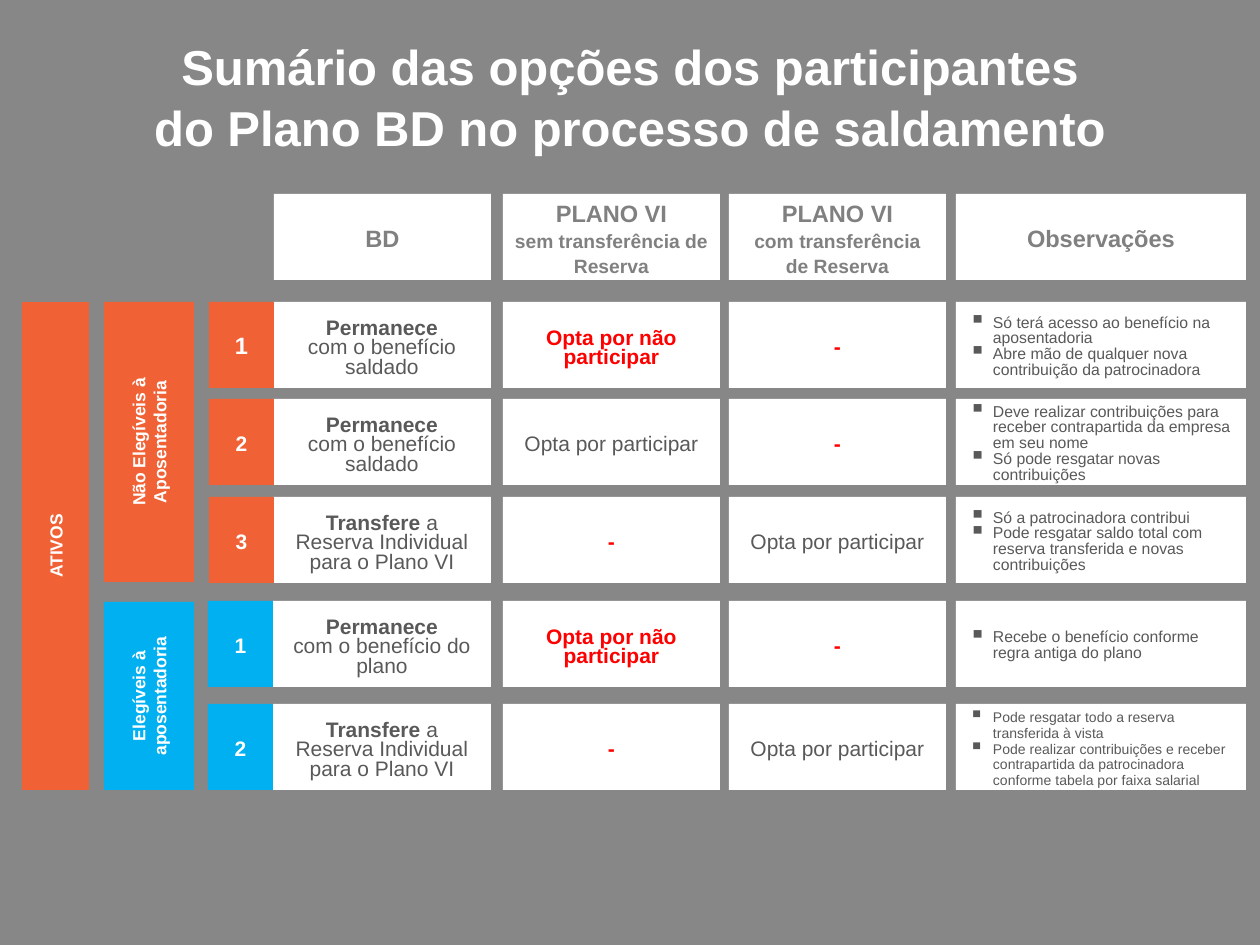
import pptx
import pptx.dml.color
import pptx.enum.shapes
import pptx.enum.text
import pptx.util
import lxml.etree

ORANGE, BLUE, WHITE, GRAY = "F16136", "00B0F0", "FFFFFF", "808080"
DARK, RED = "595959", "FF0000"
NS = "{http://schemas.openxmlformats.org/drawingml/2006/main}"


def px(num):
    return pptx.util.Emu(round(num * 914400 / 126))


def color(code):
    return pptx.dml.color.RGBColor.from_string(code)


class Deck:
    """Holds the font and the current slide, and draws each kind of element."""

    def __init__(self, font):
        self.font = font
        self.file = pptx.Presentation()
        self.file.slide_width, self.file.slide_height = px(1260), px(945)
        self.slide = self.file.slides.add_slide(self.file.slide_layouts[6])

    def fill(self, paras, frame, size, hue, bold, gap, pads):
        frame.word_wrap = True
        frame.vertical_anchor = pptx.enum.text.MSO_ANCHOR.MIDDLE
        frame.margin_left = frame.margin_right = px(pads[0])
        frame.margin_top, frame.margin_bottom = px(pads[1]), px(pads[2])
        for spot, runs in enumerate(paras):
            para = frame.add_paragraph() if spot else frame.paragraphs[0]
            para.alignment = pptx.enum.text.PP_ALIGN.CENTER
            para.line_spacing = gap
            para.font.name = self.font
            para.font.size = pptx.util.Pt(size)
            para.font.bold = bold
            para.font.color.rgb = color(hue)
            for text, style in runs:
                for row, line in enumerate(text.split("\n")):
                    if row:
                        para.add_line_break()
                    if line:
                        run = para.add_run()
                        run.text = line
                        for name, value in style.items():
                            setattr(run.font, name, value)

    def title(self, area, text):
        box = self.slide.shapes.add_textbox(*map(px, area))
        self.fill([[(text, {})]], box.text_frame, 28, WHITE, True, 1.05, (0, 7, 6))

    def box(self, area, back, paras=(), size=12, hue=DARK, bold=False,
            gap=None, pads=(13, 6, 6)):
        kind = pptx.enum.shapes.MSO_SHAPE.RECTANGLE
        shape = self.slide.shapes.add_shape(kind, *map(px, area))
        shape.shadow.inherit = False
        shape.fill.solid()
        shape.fill.fore_color.rgb = color(back)
        shape.line.fill.background()
        self.fill(paras, shape.text_frame, size, hue, bold, gap, pads)
        return shape.text_frame

    def head(self, area, runs, side=13):
        self.box(area, WHITE, [runs], 13.5, GRAY, True, 1.08, (side, 6, 6))

    def bar(self, area, back, *lines):
        frame = self.box(area, back, [[(line, {})] for line in lines], 10, WHITE, True)
        frame._txBody.bodyPr.set("vert", "vert270")

    def cell(self, area, paras, hue=DARK, bold=False, back=WHITE):
        self.box(area, back, paras, 12, hue, bold, pptx.util.Pt(11), (13, 15, 6))

    def notes(self, area, items, size):
        paras = [[(item, {})] for item in items]
        frame = self.box(area, WHITE, paras, size, gap=pptx.util.Pt(9), pads=(13, 10, 6))
        for para in frame.paragraphs:
            para.alignment = pptx.enum.text.PP_ALIGN.LEFT
            props = para._p.get_or_add_pPr()
            props.set("marL", str(px(24)))
            props.set("indent", str(px(-24)))
            scale = lxml.etree.Element(NS + "buSzPct", val="150000")
            mark = lxml.etree.Element(NS + "buChar", char="▪")
            first = props.find(NS + "defRPr")
            first.addprevious(scale)
            first.addprevious(mark)


HIGH = 86
LEFT, MID, RIGHT, LAST = (273, 218), (503, 217), (729, 217), (956, 290)
STRONG, SMALL = {"bold": True}, {"size": pptx.util.Pt(11)}
STAY = "Opta por participar"
LEAVE = "Opta por não participar"
MOVE = [[("Transfere", STRONG), (" a Reserva Individual\npara o Plano VI", {})]]


def keep(text):
    return [[("Permanece", STRONG)], [(text, {})]]


ROWS = [
    (302, ORANGE, "1", keep("com o benefício saldado"), LEAVE, "-", 9, [
        "Só terá acesso ao benefício na aposentadoria",
        "Abre mão de qualquer nova contribuição da patrocinadora"]),
    (399, ORANGE, "2", keep("com o benefício saldado"), STAY, "-", 9, [
        "Deve realizar contribuições para receber contrapartida da empresa em seu nome",
        "Só pode resgatar novas contribuições"]),
    (497, ORANGE, "3", MOVE, "-", STAY, 9, [
        "Só a patrocinadora contribui",
        "Pode resgatar saldo total com reserva transferida e novas contribuições"]),
    (601, BLUE, "1", keep("com o benefício do plano"), LEAVE, "-", 9, [
        "Recebe o benefício conforme regra antiga do plano"]),
    (704, BLUE, "2", MOVE, "-", STAY, 8, [
        "Pode resgatar todo a reserva transferida à vista",
        "Pode realizar contribuições e receber contrapartida da patrocinadora "
        "conforme tabela por faixa salarial"]),
]


def main():
    deck = Deck("Arial")
    deck.box((0, 0, 1260, 945), "878787")
    deck.title((0, 35, 1260, 119),
               "Sumário das opções dos participantes\ndo Plano BD no processo de saldamento")

    heads = [
        ((274, 217), [("BD", {})], 13),
        (MID, [("PLANO VI\n", {}), ("sem transferência de Reserva", SMALL)], 0),
        (RIGHT, [("PLANO VI\n", {}), ("com transferência de Reserva", SMALL)], 13),
        (LAST, [("Observações", {})], 13),
    ]
    for (left, wide), runs, side in heads:
        deck.head((left, 194, wide, HIGH), runs, side)

    deck.bar((22, 302, 67, 488), ORANGE, "ATIVOS")
    deck.bar((104, 302, 90, 280), ORANGE, "Não Elegíveis à", "Aposentadoria")
    deck.bar((104, 602, 90, 188), BLUE, "Elegíveis à aposentadoria")

    for top, back, num, plan, without, along, size, items in ROWS:
        deck.cell((LEFT[0], top, LEFT[1], HIGH), plan)
        for (left, wide), text in ((MID, without), (RIGHT, along)):
            alert = text != STAY
            deck.cell((left, top, wide, HIGH), [[(text, {})]],
                      RED if alert else DARK, alert)
        area = (209 if back == ORANGE else 208, top, 65, HIGH)
        if top == ROWS[0][0]:
            deck.box(area, back, [[(num, {})]], 13.5, WHITE, True)
        else:
            deck.cell(area, [[(num, {})]], WHITE, True, back)
        deck.notes((LAST[0], top, LAST[1], HIGH), items, size)

    deck.file.save("out.pptx")


if __name__ == "__main__":
    main()
